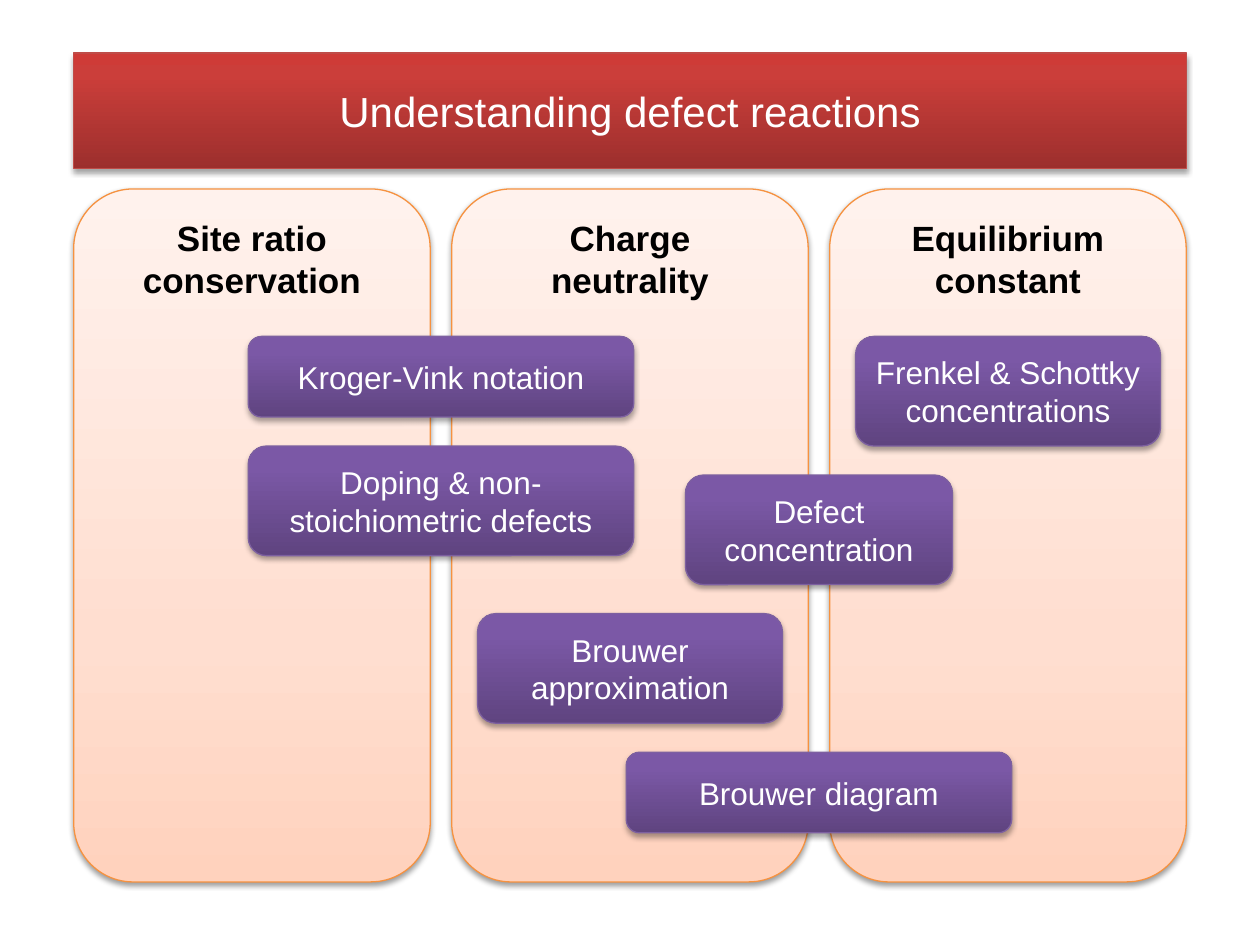
"""Build a slide on the three principles behind defect reactions."""
from lxml import etree
from pptx import Presentation
from pptx.dml.color import RGBColor
from pptx.enum import shapes, text
from pptx.oxml import parse_xml
from pptx.oxml.ns import nsdecls, qn
from pptx.util import Inches, Pt

WHITE = RGBColor(0xFF, 0xFF, 0xFF)
BLACK = RGBColor(0, 0, 0)
RED_LINE = RGBColor(0xBF, 0x4C, 0x48)
ORANGE_LINE = RGBColor(0xF6, 0x92, 0x40)
PURPLE_LINE = RGBColor(0x7D, 0x60, 0xA0)

# Each look: gradient stops from bottom to top, outline, shadow opacity, shadow distance.
RED = ([(0, "9C2F2D"), (80, "CB3E3A"), (100, "CE3B37")], RED_LINE, 35, 1.8)
PEACH = ([(0, "FFD2BD"), (35, "FFDED0"), (100, "FFF2ED")], ORANGE_LINE, 38, 1.6)
PURPLE = ([(0, "5F4480"), (80, "7B58A6"), (100, "7C57A8")], PURPLE_LINE, 35, 1.8)

TITLE = "Understanding defect reactions"
PRINCIPLES = [
    ("Site ratio conservation", 2.5),
    ("Charge neutrality", 2.17),
    ("Equilibrium constant", 2.5),
]
TOPIC_STACKS = [
    [("Kroger-Vink notation", 0.5, 3.06, 1),
     ("Doping & non-stoichiometric defects", 0.5, 3.06, 2)],
    [("Frenkel & Schottky concentrations", 2, 2.42, 2),
     ("Defect concentration", 1.5, 2.12, 2),
     ("Brouwer approximation", 1, 2.42, 2),
     ("Brouwer diagram", 1.5, 3.06, 1)],
]

SLIDE_W, SLIDE_H = 10, 7.5
PITCH, COLUMN_W = 3, 2.83
BANNER_W = 2 * PITCH + COLUMN_W
CARD_TOP, CARD_GAP = 2.67, 0.23
CARD_H = {1: 0.64, 2: 0.87}


def box(column, top, width, height):
    center = SLIDE_W / 2 + (column - 1) * PITCH
    return [Inches(v) for v in (center - width / 2, top, width, height)]


def decorate(sp, look):
    stops, line, opacity, distance = look
    gs = "".join(f'<a:gs pos="{pos * 1000}"><a:srgbClr val="{color}"/></a:gs>'
                 for pos, color in stops)
    props = sp.element.spPr
    props.append(parse_xml(
        f'<a:gradFill {nsdecls("a")} rotWithShape="1"><a:gsLst>{gs}</a:gsLst>'
        '<a:lin ang="16200000" scaled="0"/></a:gradFill>'))
    sp.line.color.rgb = line
    sp.line.width = Pt(0.75)
    props.append(parse_xml(
        f'<a:effectLst {nsdecls("a")}><a:outerShdw blurRad="{Pt(3.1)}" '
        f'dist="{Pt(distance)}" dir="5400000" rotWithShape="0">'
        f'<a:srgbClr val="000000"><a:alpha val="{opacity * 1000}"/></a:srgbClr>'
        '</a:outerShdw></a:effectLst>'))


def write(sp, words, size, color, bold=False):
    tf = sp.text_frame
    tf.word_wrap = True
    p = tf.paragraphs[0]
    p.text = words
    p.alignment = text.PP_ALIGN.CENTER
    p.font.name = "Arial"
    p.font.size = Pt(size)
    p.font.bold = bold
    p.font.color.rgb = color


def add_panel(slide, place, look):
    sp = slide.shapes.add_shape(shapes.MSO_SHAPE.ROUNDED_RECTANGLE, *place)
    decorate(sp, look)
    return sp


def add_banner(slide):
    sp = slide.shapes.title
    sp.left, sp.top, sp.width, sp.height = box(1, 0.42, BANNER_W, 0.92)
    geometry = etree.SubElement(sp.element.spPr, qn("a:prstGeom"), prst="roundRect")
    etree.SubElement(geometry, qn("a:avLst"))
    decorate(sp, RED)
    write(sp, TITLE, 24, WHITE)
    sp.text_frame.vertical_anchor = text.MSO_ANCHOR.MIDDLE


def main():
    prs = Presentation()
    prs.slide_width, prs.slide_height = Inches(SLIDE_W), Inches(SLIDE_H)
    slide = prs.slides.add_slide(prs.slide_layouts[5])
    add_banner(slide)
    for column, (heading, width) in enumerate(PRINCIPLES):
        add_panel(slide, box(column, 1.5, COLUMN_W, 5.5), PEACH)
        label = slide.shapes.add_textbox(*box(column, 1.67, width, 0.77))
        write(label, heading, 20, BLACK, bold=True)
    for stack in TOPIC_STACKS:
        top = CARD_TOP
        for topic, column, width, lines in stack:
            card = add_panel(slide, box(column, top, width, CARD_H[lines]), PURPLE)
            write(card, topic, 18, WHITE)
            top += CARD_H[lines] + CARD_GAP
    prs.save("out.pptx")


if __name__ == "__main__":
    main()
